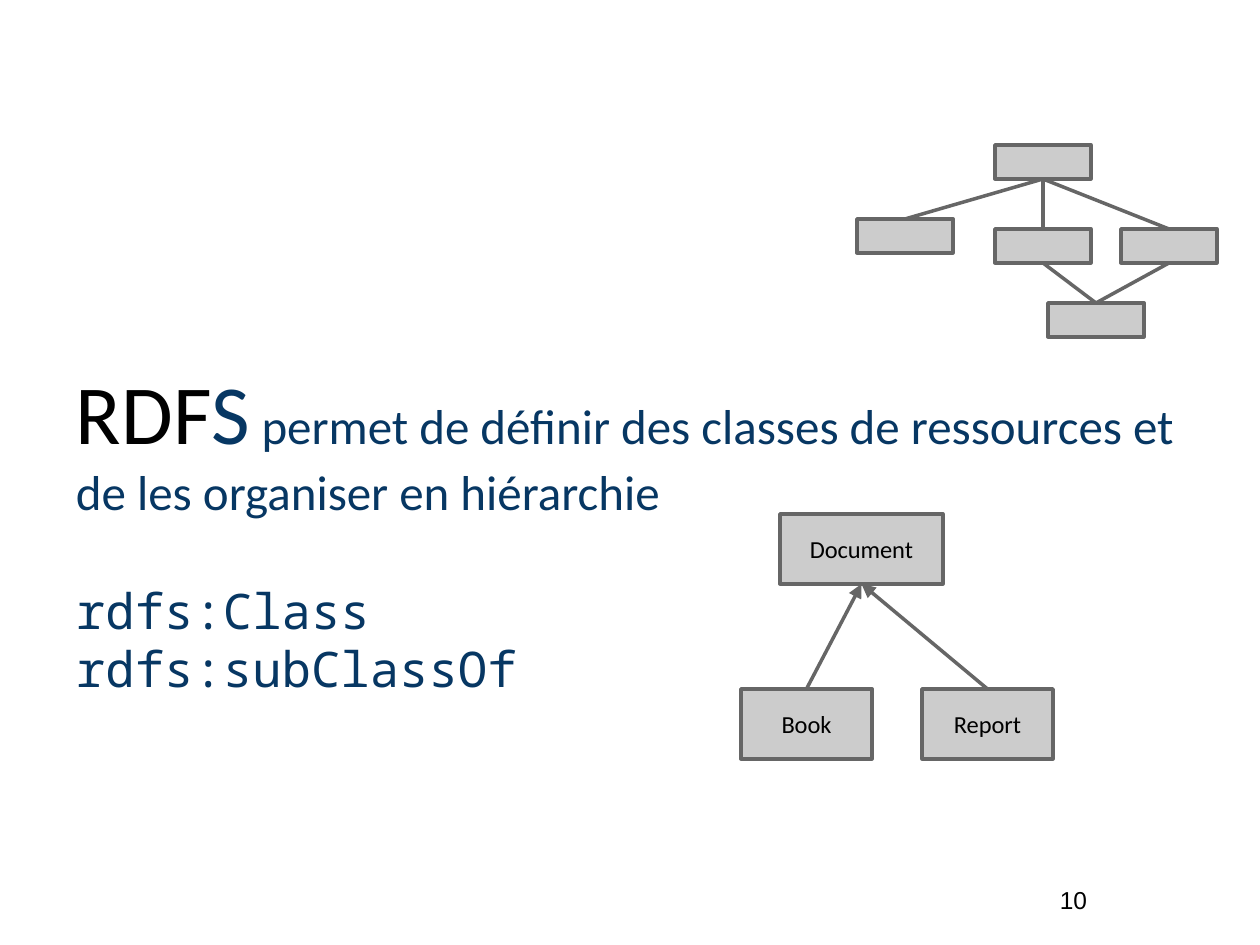
from lxml import etree
from pptx import Presentation
from pptx.dml.color import RGBColor
from pptx.enum.shapes import MSO_CONNECTOR, MSO_SHAPE
from pptx.enum.text import MSO_ANCHOR, MSO_AUTO_SIZE, PP_ALIGN
from pptx.oxml.ns import qn
from pptx.util import Pt

LINE = MSO_CONNECTOR.STRAIGHT
RECT = MSO_SHAPE.RECTANGLE
TOP, MIDDLE = MSO_ANCHOR.TOP, MSO_ANCHOR.MIDDLE
FIXED = MSO_AUTO_SIZE.NONE
LEFT, CENTER = PP_ALIGN.LEFT, PP_ALIGN.CENTER

BLACK = RGBColor(0x00, 0x00, 0x00)
NAVY = RGBColor(0x07, 0x37, 0x63)
GREY = RGBColor(0x66, 0x66, 0x66)
SILVER = RGBColor(0xCC, 0xCC, 0xCC)

SANS, MONO = "Calibri", "Noto Sans Mono"
SCALE = 914400 / 168
UPPER, LOWER = 0, 2


def emu(*px):
    return [round(n * SCALE) for n in px]


def write(para, text, size=10.5, font=SANS, color=BLACK):
    run = para.add_run()
    run.text = text
    run.font.size = Pt(size)
    run.font.name = font
    run.font.color.rgb = color


class Board:
    fill, edge, width = SILVER, GREY, Pt(1.5)

    def __init__(self, deck):
        self.slide = deck.slides.add_slide(deck.slide_layouts[1])
        title = self.slide.shapes.title
        title.element.getparent().remove(title.element)

    def frame(self, shape, inset=12, anchor=TOP):
        frame = shape.text_frame
        frame.word_wrap = True
        frame.auto_size = FIXED
        frame.vertical_anchor = anchor
        pad = emu(inset)[0]
        frame.margin_left = frame.margin_right = pad
        frame.margin_top = frame.margin_bottom = pad
        return frame

    def body(self, x, y, w, h, lines):
        """Fill the body placeholder; each line is a list of (text, format)."""
        holder = self.slide.placeholders[1]
        holder.left, holder.top, holder.width, holder.height = emu(x, y, w, h)
        frame = self.frame(holder)
        for i, (gap, runs) in enumerate(lines):
            para = frame.add_paragraph() if i else frame.paragraphs[0]
            para.alignment = LEFT
            para.line_spacing = 1.0
            para.space_before, para.space_after = Pt(gap), Pt(0)
            props = para._p.get_or_add_pPr()
            props.set("marL", "0")
            props.set("indent", "0")
            etree.SubElement(props, qn("a:buNone"))
            for text, style in runs:
                write(para, text, **style)

    def box(self, x, y, w, h, label=""):
        shape = self.slide.shapes.add_shape(RECT, *emu(x, y, w, h))
        shape.shadow.inherit = False
        shape.fill.solid()
        shape.fill.fore_color.rgb = self.fill
        shape.line.color.rgb = self.edge
        shape.line.width = self.width
        if label:
            para = self.frame(shape, anchor=MIDDLE).paragraphs[0]
            para.alignment = CENTER
            write(para, label)
        return shape

    def link(self, child, parent, arrow=False):
        """Join the top of the child to the bottom of the parent."""
        line = self.slide.shapes.add_connector(LINE, 0, 0, 0, 0)
        line.begin_connect(child, UPPER)
        line.end_connect(parent, LOWER)
        line.line.color.rgb = self.edge
        line.line.width = self.width
        if arrow:
            stroke = line.line._get_or_add_ln()
            etree.SubElement(stroke, qn("a:tailEnd"), type="triangle")
        etree.SubElement(line._element.spPr, qn("a:effectLst"))

    def note(self, x, y, w, h, text, **style):
        shape = self.slide.shapes.add_textbox(*emu(x, y, w, h))
        frame = self.frame(shape, inset=17, anchor=MIDDLE)
        write(frame.paragraphs[0], text, **style)


def main():
    deck = Presentation()
    deck.slide_width, deck.slide_height = emu(1260, 945)
    board = Board(deck)

    code = dict(size=21, font=MONO, color=NAVY)
    board.body(64, 349, 1134, 457, [
        (0, [("RDF", dict(size=36)),
             ("S", dict(size=36, color=NAVY)),
             (" permet de définir des classes de ressources et "
              "de les organiser en hiérarchie", dict(size=21, color=NAVY))]),
        (25.5, [("rdfs:Class", code)]),
        (0, [("rdfs:subClassOf", code)]),
    ])

    root = board.box(780, 514, 163, 70, "Document")
    for x, label in ((741, "Book"), (922, "Report")):
        board.link(board.box(x, 689, 131, 70, label), root, arrow=True)

    spots = ((995, 145), (857, 219), (995, 229), (1121, 229), (1048, 303))
    top, side, mid, right, leaf = [board.box(x, y, 96, 34) for x, y in spots]
    for child, parent in ((side, top), (mid, top), (right, top),
                          (leaf, mid), (leaf, right)):
        board.link(child, parent)

    board.note(1043, 864, 76, 72, "10", font="Arial")
    deck.save("out.pptx")


if __name__ == "__main__":
    main()
